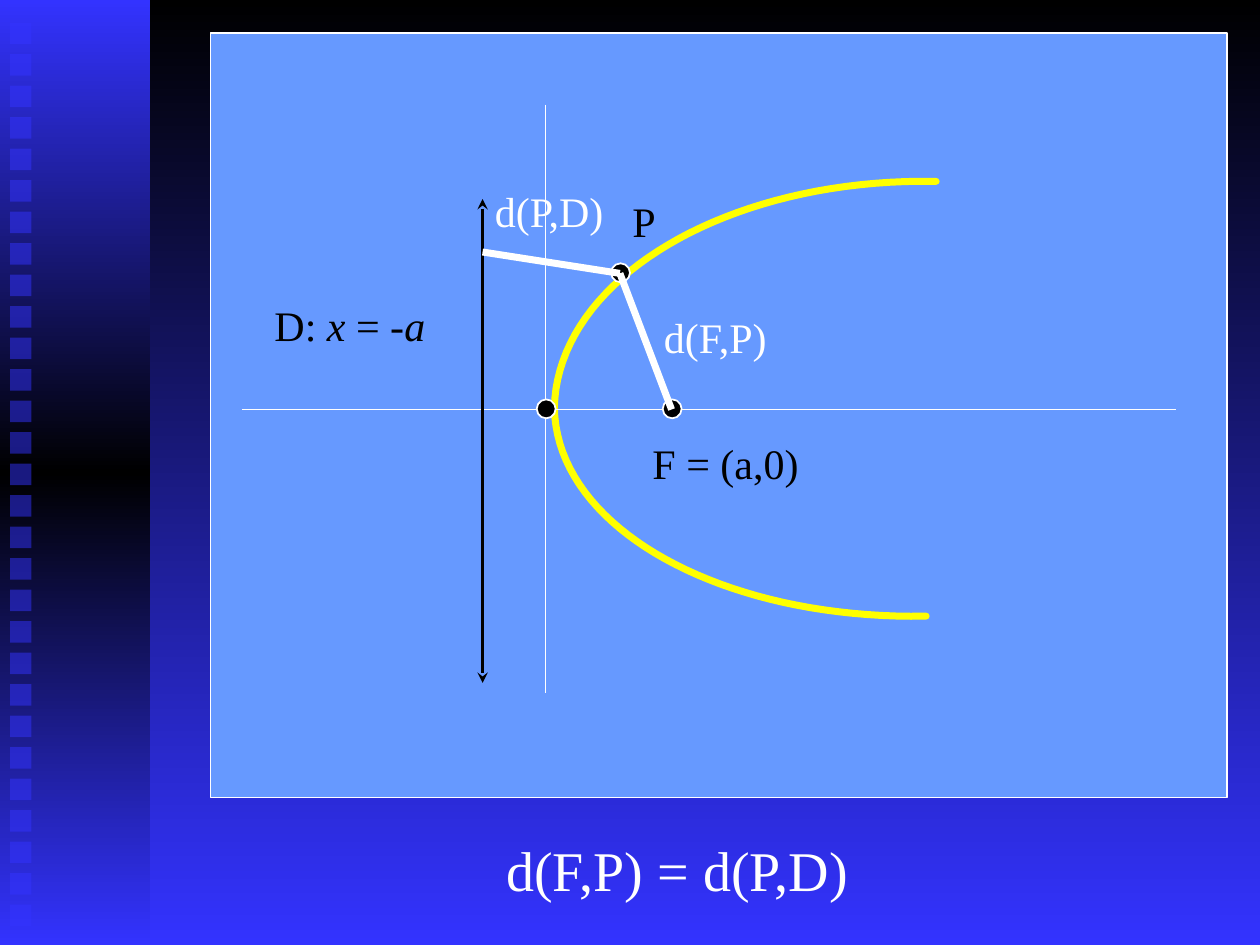
"""Build a slide showing the focus and directrix definition of a parabola."""
from copy import deepcopy

from lxml import etree
from pptx import Presentation
from pptx.dml.color import RGBColor
from pptx.enum.shapes import MSO_CONNECTOR, MSO_SHAPE
from pptx.enum.text import MSO_AUTO_SIZE
from pptx.oxml.ns import qn
from pptx.util import Inches, Pt

RECT, OVAL = MSO_SHAPE.RECTANGLE, MSO_SHAPE.OVAL
STRAIGHT = MSO_CONNECTOR.STRAIGHT
GROW = MSO_AUTO_SIZE.SHAPE_TO_FIT_TEXT
BLACK, WHITE, BLUE, PANEL, YELLOW = "000000", "FFFFFF", "3333FF", "6699FF", "FFFF00"
FONT = "Times New Roman"


def rgb(value):
    return RGBColor.from_string(value)


def add_block(kind, x, y, w, h, fill, line=None):
    sp = s.shapes.add_shape(kind, Inches(x), Inches(y), Inches(w), Inches(h))
    sp.shadow.inherit = False
    sp.fill.solid()
    sp.fill.fore_color.rgb = rgb(fill)
    if line:
        sp.line.color.rgb = rgb(line)
        sp.line.width = Pt(1)
    else:
        sp.line.fill.background()
    return sp


prs = Presentation()
prs.slide_width, prs.slide_height = Inches(10), Inches(7.5)
s = prs.slides.add_slide(prs.slide_layouts[6])

bg = s.background.fill
bg.gradient()
bg.gradient_angle = 270
for stop, color in zip(bg.gradient_stops, (BLACK, BLUE)):
    stop.color.rgb = rgb(color)

bar = add_block(RECT, 0, 0, 1.19, 7.5, BLUE)
bar.fill.gradient()
bar.fill.gradient_angle = 270
stops = bar.element.spPr.find(".//" + qn("a:gsLst"))
stops.append(deepcopy(stops[-1]))
for stop, color, position in zip(bar.fill.gradient_stops, (BLUE, BLACK, BLUE), (0, 0.5, 1)):
    stop.color.rgb = rgb(color)
    stop.position = position

for i in range(29):
    sp = add_block(RECT, 0.08, 0.18 + 0.25 * i, 0.17, 0.17, BLUE)
    clr = sp.element.spPr.find(".//" + qn("a:srgbClr"))
    etree.SubElement(clr, qn("a:alpha"), val="50000")

add_block(RECT, 1.67, 0.26, 8.07, 6.07, PANEL, WHITE)

arcs = [
    [(4.4, 3.24), (4.42, 2.21), (5.78, 1.41), (7.43, 1.44)],
    [(4.4, 3.24), (4.42, 4.2), (5.74, 4.92), (7.35, 4.89)],
]
for arc in arcs:
    points = []
    for i in range(41):
        t = i / 40
        weights = ((1 - t) ** 3, 3 * t * (1 - t) ** 2, 3 * t * t * (1 - t), t ** 3)
        points.append([Inches(sum(w * c for w, c in zip(weights, axis))) for axis in zip(*arc)])
    builder = s.shapes.build_freeform(*points[0])
    builder.add_line_segments(points[1:], close=False)
    sp = builder.convert_to_shape()
    sp.shadow.inherit = False
    sp.fill.background()
    sp.line.color.rgb = rgb(YELLOW)
    sp.line.width = Pt(4)
    etree.SubElement(sp.line._get_or_add_ln(), qn("a:round"))
    sp.line._get_or_add_ln().set("cap", "rnd")

focus, origin, point = (5.33, 3.25), (4.33, 3.25), (4.92, 2.17)
for x, y in (focus, origin, point):
    add_block(OVAL, x - 0.07, y - 0.08, 0.15, 0.15, BLACK, WHITE)

lines = [
    ((4.33, 0.83), (4.33, 5.5), WHITE, 1, False),
    ((1.92, 3.25), (9.33, 3.25), WHITE, 1, False),
    ((3.83, 1.58), (3.83, 5.42), BLACK, 2, True),
    (point, focus, WHITE, 4, False),
    (point, (3.83, 2), WHITE, 4, False),
]
first_dot = s.shapes[-3].element
for start, end, color, width, arrows in lines:
    cx = s.shapes.add_connector(STRAIGHT, *map(Inches, start + end))
    cx.line.color.rgb = rgb(color)
    cx.line.width = Pt(width)
    if arrows:
        for tag in ("a:headEnd", "a:tailEnd"):
            etree.SubElement(cx.line._get_or_add_ln(), qn(tag), type="stealth")
    etree.SubElement(cx.element.spPr, qn("a:effectLst"))
    if width == 1:
        first_dot.addprevious(cx.element)

labels = [
    (3.92, 6.58, 3.92, 0.63, 32, WHITE, ["d(F,P) = d(P,D)"]),
    (2.08, 2.33, 1.58, 0.5, 24, BLACK, ["D: ", "x", " = -", "a"]),
    (5.08, 3.42, 1.58, 0.5, 24, BLACK, ["F = (a,0)"]),
    (5.17, 2.42, 1.58, 0.5, 24, WHITE, ["d(F,P)"]),
    (4.92, 1.5, 0.42, 0.5, 24, BLACK, ["P"]),
    (3.83, 1.42, 1.17, 0.5, 24, WHITE, ["d(P,D)"]),
]
for x, y, w, h, size, color, parts in labels:
    tf = s.shapes.add_textbox(Inches(x), Inches(y), Inches(w), Inches(h)).text_frame
    tf.word_wrap = True
    tf.auto_size = GROW
    p = tf.paragraphs[0]
    before = etree.SubElement(p._p.get_or_add_pPr(), qn("a:spcBef"))
    etree.SubElement(before, qn("a:spcPct"), val="50000")
    for i, part in enumerate(parts):
        r = p.add_run()
        r.text = part
        r.font.name = FONT
        r.font.size = Pt(size)
        r.font.color.rgb = rgb(color)
        r.font.italic = i % 2 == 1

prs.save("out.pptx")
